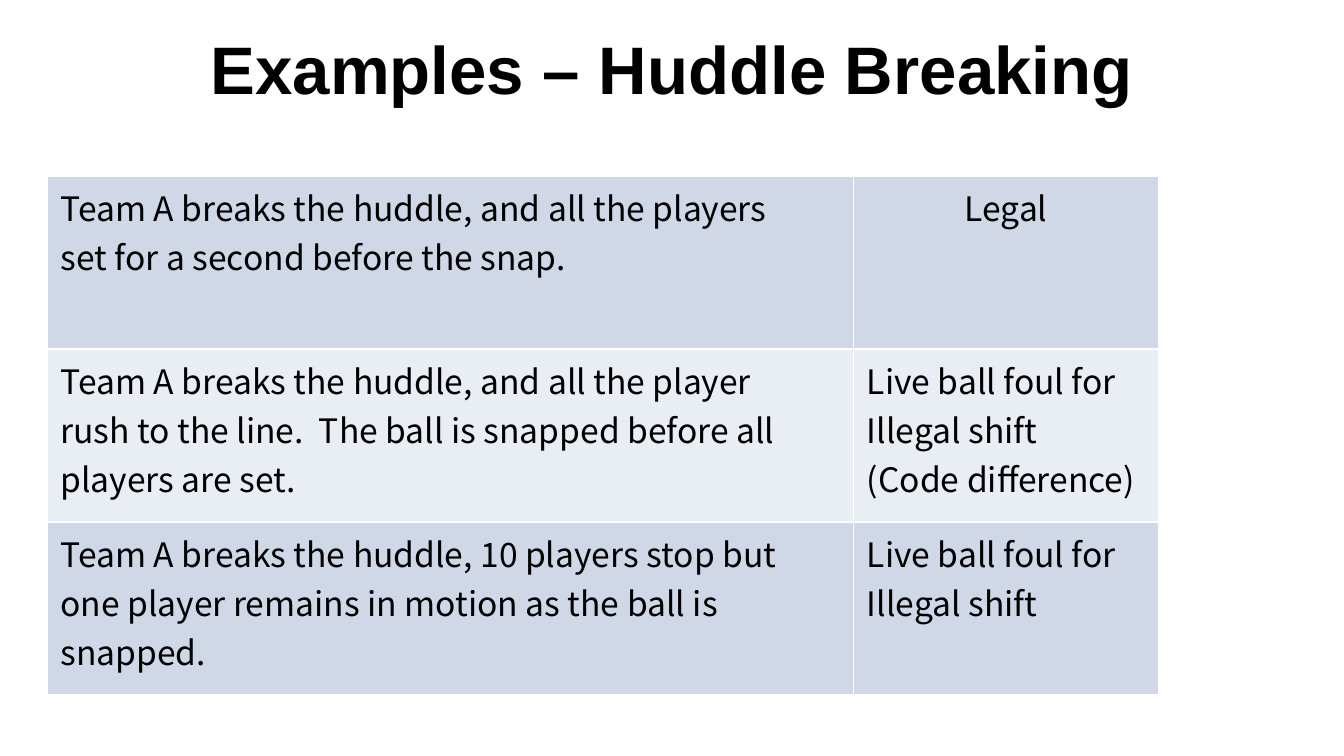
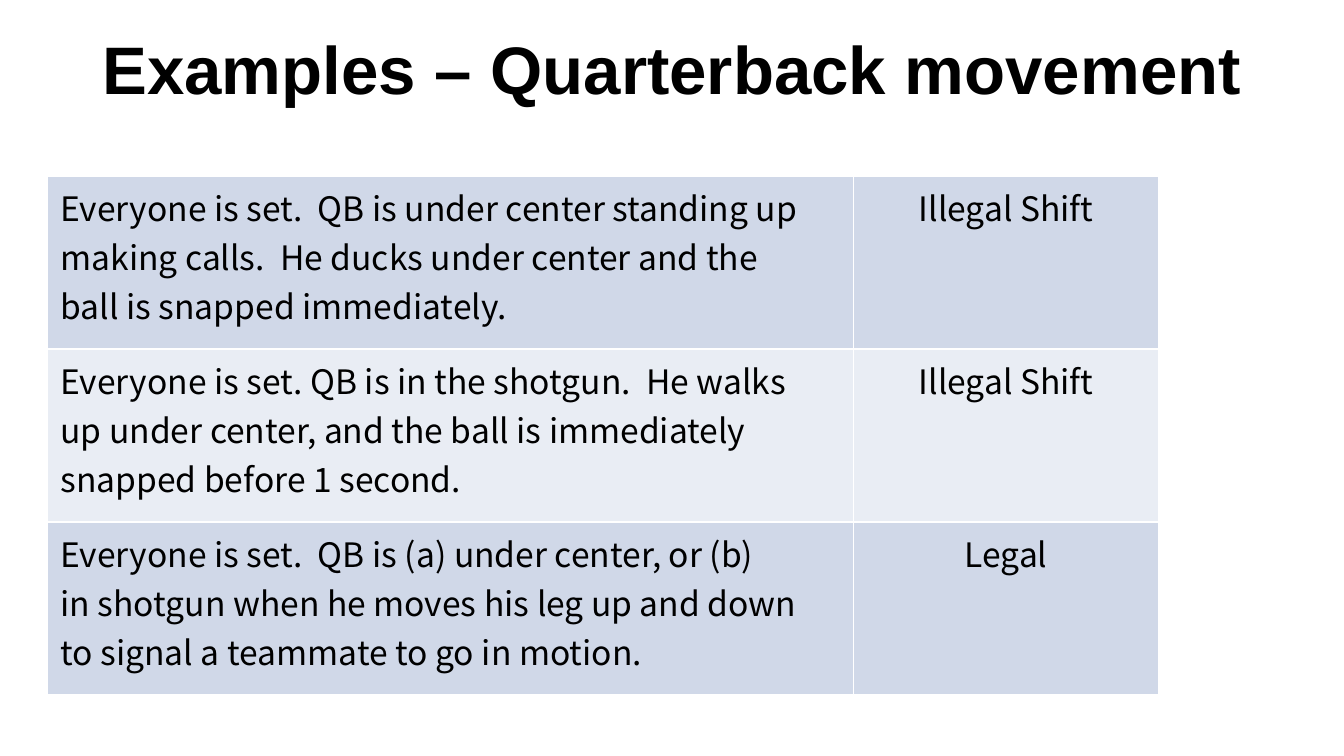
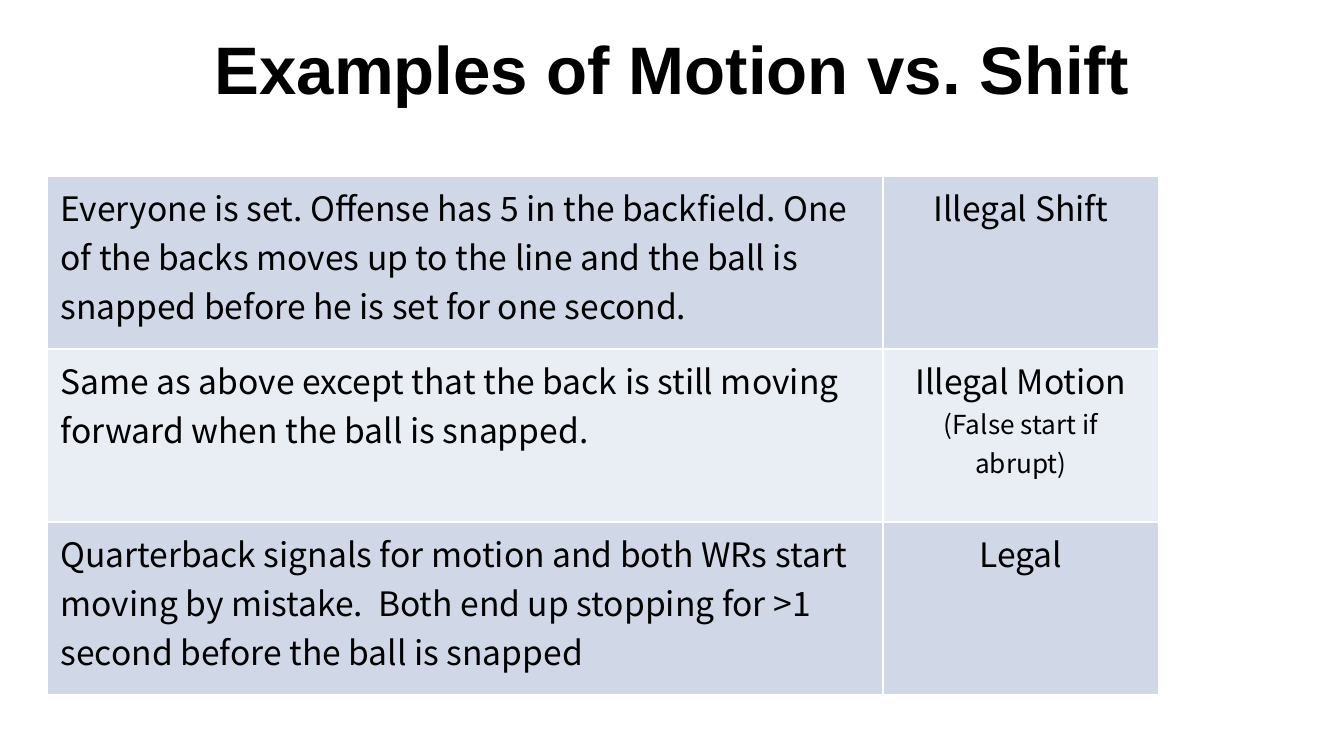
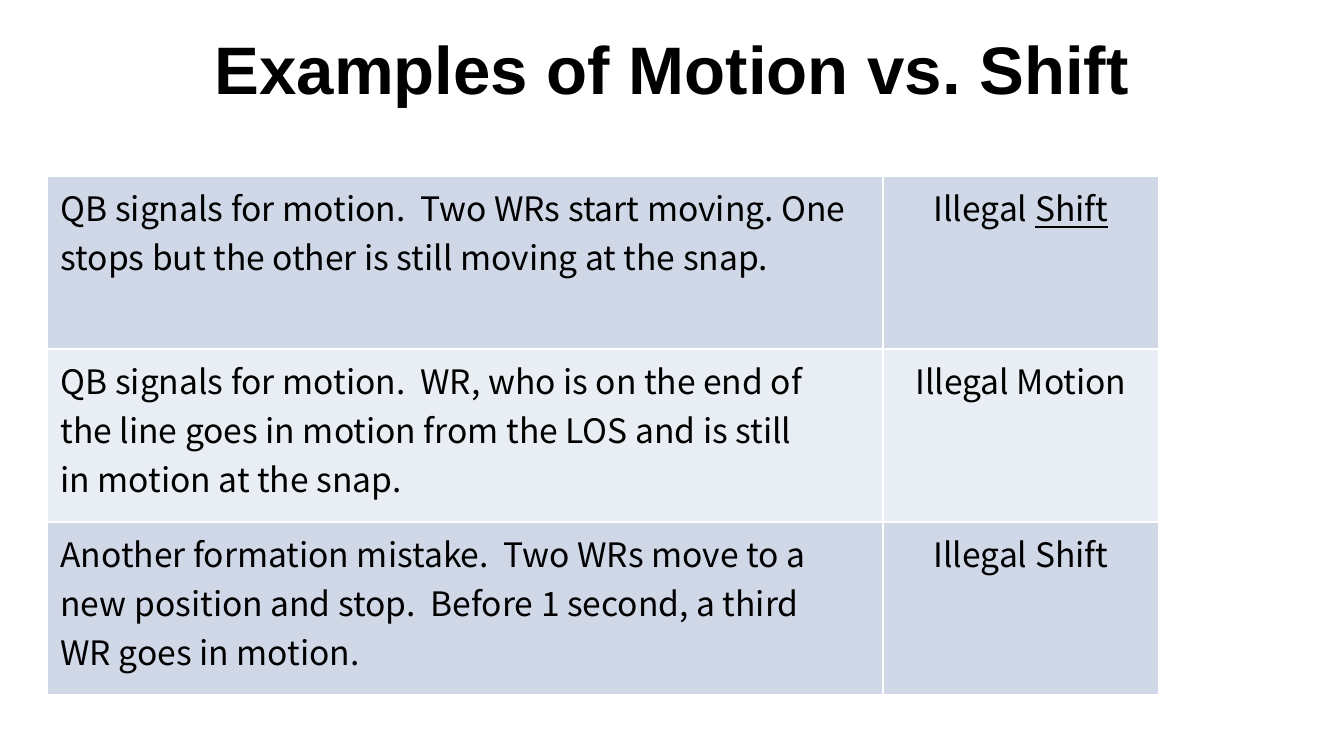
from dataclasses import dataclass

from lxml import etree
from pptx import Presentation
from pptx.dml.color import RGBColor
from pptx.enum import text
from pptx.oxml import ns
from pptx.util import Cm, Pt

# Shared look
INK, WHITE = "000000", "FFFFFF"
BANDS = ("D0D8E8", "E9EDF4")
TITLE_FONT = {"name": "Arial", "size": Pt(36), "bold": True}
CELL_FONT = {"name": "Noto Sans CJK KR", "size": Pt(18), "bold": False}
NOTE_FONT = {**CELL_FONT, "size": Pt(14)}
UNDERLINED_FONT = {**CELL_FONT, "underline": True}
TITLE_BOX = {"left": Cm(0), "top": Cm(0.08), "width": Cm(25.4), "height": Cm(2.39)}
TABLE_LEFT, TABLE_TOP, TABLE_WIDTH = Cm(0.89), Cm(3.33), Cm(21.01)
ROW_HEIGHT = Cm(3.27)
WIDE_PLAY, WIDER_PLAY = Cm(15.24), Cm(15.8)
LEFT, CENTER = text.PP_ALIGN.LEFT, text.PP_ALIGN.CENTER


@dataclass
class Ruling:
    """A play, one paragraph per line, and the call that goes with it."""
    play: str
    call: str
    underlined: str = ""
    note: str = ""
    align: text.PP_ALIGN = CENTER


@dataclass
class ExampleSlide:
    title: str
    play_width: int
    rulings: list[Ruling]


SLIDES = [
    ExampleSlide("Examples – Huddle Breaking", WIDE_PLAY, [
        Ruling("Team A breaks the huddle, and all the players\n"
               "set for a second before the snap.", "Legal"),
        Ruling("Team A breaks the huddle, and all the player\n"
               "rush to the line.  The ball is snapped before all\n"
               "players are set.",
               "Live ball foul for\nIllegal shift\n(Code difference)", align=LEFT),
        Ruling("Team A breaks the huddle, 10 players stop but\n"
               "one player remains in motion as the ball is\n"
               "snapped.", "Live ball foul for\nIllegal shift", align=LEFT),
    ]),
    ExampleSlide("Examples – Quarterback movement", WIDE_PLAY, [
        Ruling("Everyone is set.  QB is under center standing up\n"
               "making calls.  He ducks under center and the\n"
               "ball is snapped immediately.", "Illegal Shift"),
        Ruling("Everyone is set. QB is in the shotgun.  He walks\n"
               "up under center, and the ball is immediately\n"
               "snapped before 1 second.", "Illegal Shift"),
        Ruling("Everyone is set.  QB is (a) under center, or (b)\n"
               "in shotgun when he moves his leg up and down\n"
               "to signal a teammate to go in motion.", "Legal"),
    ]),
    ExampleSlide("Examples of Motion vs. Shift", WIDER_PLAY, [
        Ruling("Everyone is set. Offense has 5 in the backfield. One\n"
               "of the backs moves up to the line and the ball is\n"
               "snapped before he is set for one second.", "Illegal Shift"),
        Ruling("Same as above except that the back is still moving\n"
               "forward when the ball is snapped.",
               "Illegal Motion", note="(False start if abrupt)"),
        Ruling("Quarterback signals for motion and both WRs start\n"
               "moving by mistake.  Both end up stopping for >1\n"
               "second before the ball is snapped", "Legal"),
    ]),
    ExampleSlide("Examples of Motion vs. Shift", WIDER_PLAY, [
        Ruling("QB signals for motion.  Two WRs start moving. One\n"
               "stops but the other is still moving at the snap.",
               "Illegal ", underlined="Shift"),
        Ruling("QB signals for motion.  WR, who is on the end of\n"
               "the line goes in motion from the LOS and is still\n"
               "in motion at the snap.", "Illegal Motion"),
        Ruling("Another formation mistake.  Two WRs move to a\n"
               "new position and stop.  Before 1 second, a third\n"
               "WR goes in motion.", "Illegal Shift"),
    ]),
]


def color(value: str) -> RGBColor:
    return RGBColor.from_string(value)


def set_attrs(target, values: dict) -> None:
    for name, value in values.items():
        setattr(target, name, value)


def add_run(p, words: str, font: dict) -> None:
    r = p.add_run()
    r.text = words
    set_attrs(r.font, font)
    r.font.color.rgb = color(INK)


def write_lines(tf, words: str, font: dict, align: text.PP_ALIGN) -> None:
    for i, line in enumerate(words.split("\n")):
        p = tf.add_paragraph() if i else tf.paragraphs[0]
        p.alignment = align
        add_run(p, line, font)


def style_cell(cell, fill: str) -> None:
    # Borders come before the fill in the cell properties
    tc_pr = cell._tc.get_or_add_tcPr()
    for side in ("lnL", "lnR", "lnT", "lnB"):
        ln = etree.SubElement(tc_pr, ns.qn(f"a:{side}"), w=str(Pt(1)))
        solid = etree.SubElement(ln, ns.qn("a:solidFill"))
        etree.SubElement(solid, ns.qn("a:srgbClr"), val=WHITE)
    cell.fill.solid()
    cell.fill.fore_color.rgb = color(fill)


def add_title(s, words: str) -> None:
    sp = s.shapes.title
    set_attrs(sp, TITLE_BOX)
    tf = sp.text_frame
    set_attrs(tf, {"vertical_anchor": text.MSO_ANCHOR.MIDDLE, "word_wrap": True,
                   "auto_size": text.MSO_AUTO_SIZE.NONE})
    write_lines(tf, words, TITLE_FONT, CENTER)


def add_rulings(s, rulings: list[Ruling], play_width: int) -> None:
    table = s.shapes.add_table(len(rulings), 2, TABLE_LEFT, TABLE_TOP, TABLE_WIDTH,
                               ROW_HEIGHT * len(rulings)).table
    table.first_row = False
    table.columns[0].width = play_width
    table.columns[1].width = TABLE_WIDTH - play_width
    for i, ruling in enumerate(rulings):
        play, call = table.cell(i, 0), table.cell(i, 1)
        for cell in (play, call):
            style_cell(cell, BANDS[i % 2])
        write_lines(play.text_frame, ruling.play, CELL_FONT, LEFT)
        tf = call.text_frame
        write_lines(tf, ruling.call, CELL_FONT, ruling.align)
        if ruling.underlined:
            add_run(tf.paragraphs[-1], ruling.underlined, UNDERLINED_FONT)
        if ruling.note:
            p = tf.add_paragraph()
            p.alignment = ruling.align
            add_run(p, ruling.note, NOTE_FONT)


def main() -> None:
    prs = Presentation()
    prs.slide_width, prs.slide_height = Cm(25.4), Cm(14.29)
    title_only = prs.slide_layouts[5]
    for example in SLIDES:
        s = prs.slides.add_slide(title_only)
        add_title(s, example.title)
        add_rulings(s, example.rulings, example.play_width)
    prs.save("out.pptx")


if __name__ == "__main__":
    main()
